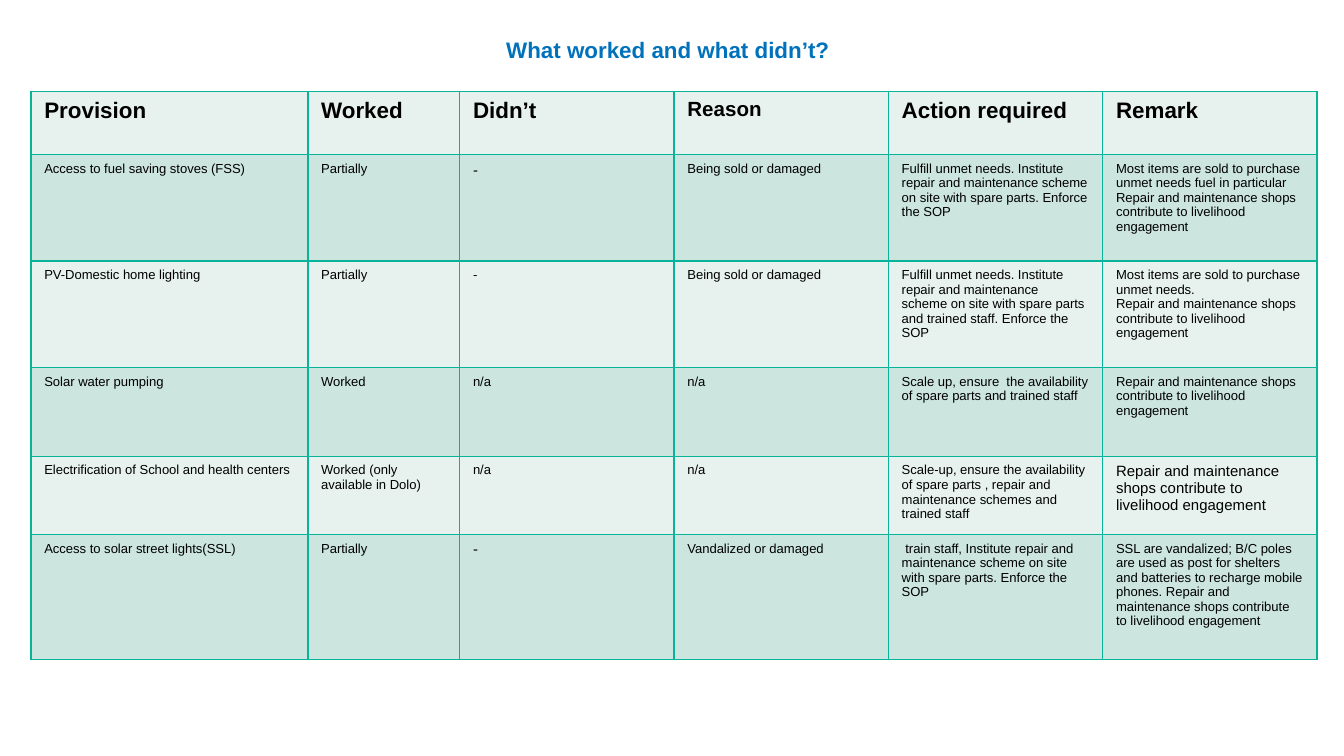
from lxml.etree import fromstring
from pptx import Presentation
from pptx.dml.color import RGBColor
from pptx.enum.text import MSO_ANCHOR, PP_ALIGN
from pptx.oxml.ns import nsdecls
from pptx.util import Inches, Pt

FONT = "Arial"
BLUE, BLACK, GREEN = "0072BC", "000000", "08B499"
BANDS = ["E7F2EF", "CCE5DE"]
SLIDE_WIDTH = 10
SLIDE_HEIGHT = SLIDE_WIDTH * 9 / 16
LEFT, WIDTH, HEIGHT = 0.23, 9.57, 4.23
# The last four columns share what the first two leave
COLS = [2.06, 1.13] + [(WIDTH - 2.06 - 1.13) / 4] * 4
# Row heights as shares of the table height
ROWS = [0.47, 0.79, 0.79, 0.66, 0.58, 0.93]
BODY_SIZE = 7
SHOPS = "Repair and maintenance shops contribute to livelihood engagement"

CONTENT = [
    ["Provision", "Worked", "Didn’t", "Reason", "Action required", "Remark"],
    ["Access to fuel saving stoves (FSS)", "Partially", "-", "Being sold or damaged",
     "Fulfill unmet needs. Institute repair and maintenance scheme on site with "
     "spare parts. Enforce the SOP",
     "Most items are sold to purchase unmet needs fuel in particular\n" + SHOPS],
    ["PV-Domestic home lighting", "Partially", "-", "Being sold or damaged",
     "Fulfill unmet needs. Institute repair and maintenance  scheme on site with "
     "spare parts and trained staff. Enforce the SOP",
     "Most items are sold to purchase unmet needs.\n" + SHOPS],
    ["Solar water pumping", "Worked", "n/a", "n/a",
     "Scale up, ensure  the availability of spare parts and trained staff", SHOPS],
    ["Electrification of School and health centers",
     "Worked (only available in Dolo)", "n/a", "n/a",
     "Scale-up, ensure the availability of spare parts , repair and maintenance "
     "schemes and trained staff", SHOPS],
    ["Access to solar street lights(SSL)", "Partially", "-", "Vandalized or damaged",
     " train staff, Institute repair and maintenance scheme on site with spare "
     "parts. Enforce the SOP",
     "SSL are vandalized; B/C poles are used as post for shelters and batteries to "
     "recharge mobile phones. Repair and maintenance shops contribute to "
     "livelihood engagement"],
]
# Sizes that differ from the rest of their row, by (row, column)
SIZES = {(0, 3): 11, (1, 2): 8, (4, 5): 8, (5, 2): 8}


def rgb(color):
    return RGBColor.from_string(color)


def write(tf, text, size=BODY_SIZE, color=BLACK, bold=False,
          align=PP_ALIGN.LEFT, spacing=1.0):
    for i, line in enumerate(text.split("\n")):
        p = tf.paragraphs[0] if i == 0 else tf.add_paragraph()
        p.alignment, p.line_spacing = align, spacing
        p.space_before = p.space_after = Pt(0)
        r = p.add_run()
        r.text = line
        r.font.name, r.font.size, r.font.bold = FONT, Pt(size), bold
        r.font.color.rgb = rgb(color)


def set_borders(cell, color, width=1):
    tc_pr = cell._tc.get_or_add_tcPr()
    # Borders must come before the fill
    for i, side in enumerate(("lnL", "lnR", "lnT", "lnB")):
        tc_pr.insert(i, fromstring(
            f'<a:{side} {nsdecls("a")} w="{Pt(width)}"><a:solidFill>'
            f'<a:srgbClr val="{color}"/></a:solidFill></a:{side}>'))


def add_title(s, text):
    sp = s.shapes.title
    sp.left, sp.top = Inches(LEFT), Inches(0.19)
    sp.width, sp.height = Inches(WIDTH - 0.09), Inches(0.28)
    tf = sp.text_frame
    tf.margin_left = tf.margin_right = tf.margin_top = tf.margin_bottom = 0
    tf.vertical_anchor = MSO_ANCHOR.BOTTOM
    tf.word_wrap = True
    write(tf, text, size=12, color=BLUE, bold=True,
          align=PP_ALIGN.CENTER, spacing=0.9)


def add_grid(s, content):
    table = s.shapes.add_table(len(ROWS), len(COLS), Inches(LEFT), Inches(0.68),
                               Inches(WIDTH), Inches(HEIGHT)).table
    for column, width in zip(table.columns, COLS):
        column.width = Inches(width)
    for row, share in zip(table.rows, ROWS):
        row.height = Inches(HEIGHT * share / sum(ROWS))
    for i, texts in enumerate(content):
        for j, text in enumerate(texts):
            cell = table.cell(i, j)
            cell.fill.solid()
            cell.fill.fore_color.rgb = rgb(BANDS[i % 2])
            set_borders(cell, GREEN)
            size = SIZES.get((i, j), BODY_SIZE if i else 12)
            write(cell.text_frame, text, size=size, bold=i == 0)


def main():
    prs = Presentation()
    prs.slide_width, prs.slide_height = Inches(SLIDE_WIDTH), Inches(SLIDE_HEIGHT)
    s = prs.slides.add_slide(prs.slide_layouts[5])
    add_title(s, "What worked and what didn’t?")
    add_grid(s, CONTENT)
    prs.save("out.pptx")


if __name__ == "__main__":
    main()
